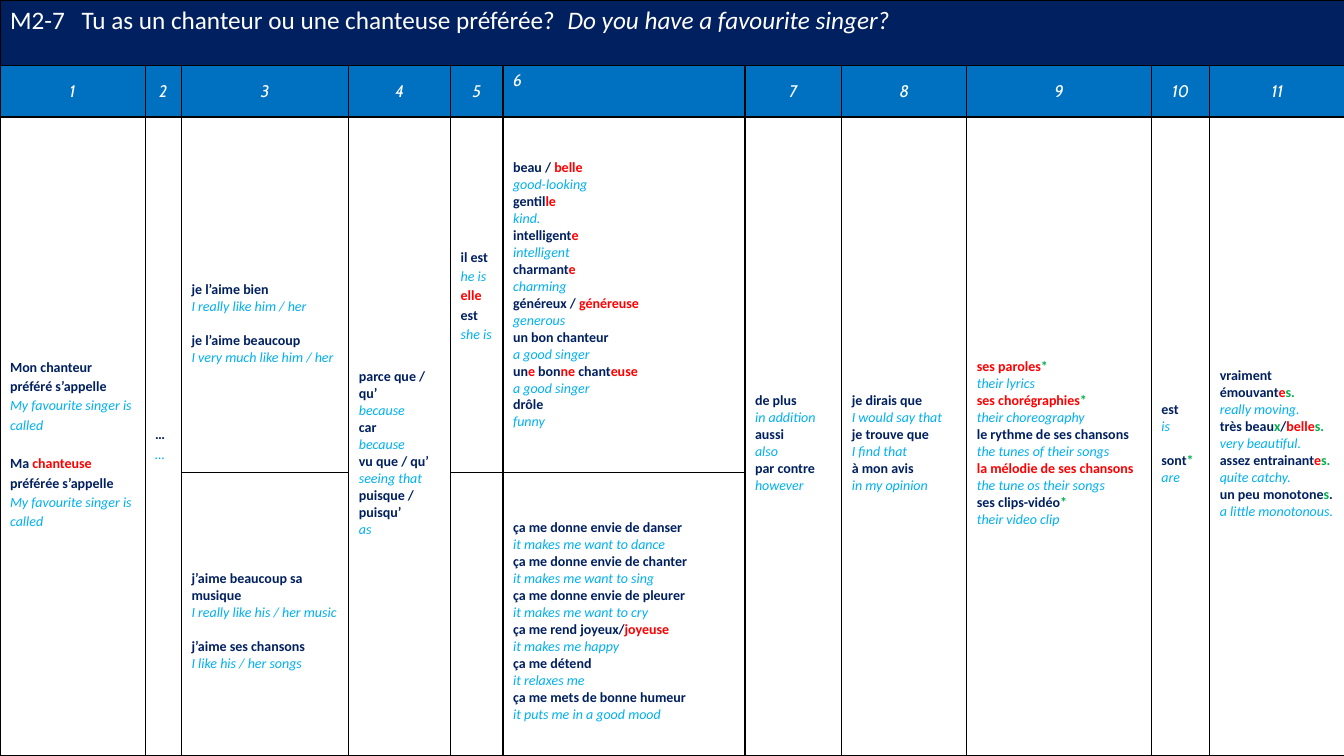
from dataclasses import dataclass

from lxml import etree
from pptx import Presentation
from pptx.dml.color import RGBColor
from pptx.enum.text import MSO_ANCHOR as Anchor, PP_ALIGN as Align
from pptx.oxml.ns import qn
from pptx.util import Inches, Pt

COLOURS = {
    "navy": "002060", "blue": "0070C0", "sky": "00B0F0", "white": "FFFFFF",
    "black": "000000", "r": "FF0000", "g": "00B050",
}
COLUMN_WIDTHS = [1.44, 0.36, 1.66, 1.01, 0.52, 2.4, 0.96, 1.24, 1.83, 0.58, 1.34]
ROW_HEIGHTS = [0.65, 0.51, 3.53, 2.81]
TITLE_TABS = [0.71, 5.53]


@dataclass
class Entry:
    """Groups of (French, English) pairs; r: marks feminine and g: plural endings."""
    row: int
    column: int
    groups: list
    rows: int = 1
    line_spacing: float = 1
    top_margin: float = 0.19


ENTRIES = [
    Entry(2, 0, [
        [("Mon chanteur préféré s’appelle", "My favourite singer is called")],
        [("Ma|r: chanteuse |préférée s’appelle", "My favourite singer is called")],
    ], rows=2, line_spacing=1.14),
    Entry(2, 1, [[("…", "…")]], rows=2, line_spacing=1.14),
    Entry(2, 2, [
        [("je l’aime bien", "I really like him / her")],
        [("je l’aime beaucoup", "I very much like him / her")],
    ], top_margin=0.63),
    Entry(2, 3, [[
        ("parce que / qu’", "because"),
        ("car", "because"),
        ("vu que / qu’", "seeing that"),
        ("puisque / puisqu’", "as"),
    ]], rows=2, top_margin=0.38),
    Entry(2, 4, [[("il est", "he is"), ("r:elle| est", "she is")]],
          line_spacing=1.14, top_margin=0.05),
    Entry(2, 5, [[
        ("beau / |r:belle", "good-looking"),
        ("gentil|r:le", "kind."),
        ("intelligent|r:e", "intelligent"),
        ("charmant|r:e", "charming"),
        ("généreux / |r:généreuse", "generous"),
        ("un bon chanteur", "a good singer"),
        ("un|r:e |bon|r:ne| chant|r:euse", "a good singer"),
        ("drôle", "funny"),
    ]], top_margin=0.05),
    Entry(2, 6, [[
        ("de plus", "in addition"),
        ("aussi", "also"),
        ("par contre", "however"),
    ]], rows=2),
    Entry(2, 7, [[
        ("je dirais que", "I would say that"),
        ("je trouve que", "I find that"),
        ("à mon avis", "in my opinion"),
    ]], rows=2),
    Entry(2, 8, [[
        ("r:ses paroles|g:*", "their lyrics"),
        ("r:ses chorégraphies|g:*", "their choreography"),
        ("le rythme de ses chansons", "the tunes of their songs"),
        ("r:la mélodie de ses chansons", "the tune os their songs"),
        ("ses clips-vidéo|g:*", "their video clip"),
    ]], rows=2),
    Entry(2, 9, [[("est", "is")], [("sont|g:*", "are")]], rows=2),
    Entry(2, 10, [[
        ("vraiment émouvant|r:e|g:s.", "really moving."),
        ("très beau|g:x|/|r:belle|g:s.", "very beautiful."),
        ("assez entrainant|r:e|g:s.", "quite catchy."),
        ("un peu monotone|g:s|.", "a little monotonous."),
    ]], rows=2),
    Entry(3, 2, [
        [("j’aime beaucoup sa musique", "I really like his / her music")],
        [("j’aime ses chansons", "I like his / her songs")],
    ]),
    Entry(3, 5, [[
        ("ça me donne envie de danser", "it makes me want to dance"),
        ("ça me donne envie de chanter", "it makes me want to sing"),
        ("ça me donne envie de pleurer", "it makes me want to cry"),
        ("ça me rend joyeux/|r:joyeuse", "it makes me happy"),
        ("ça me détend", "it relaxes me"),
        ("ça me mets de bonne humeur", "it puts me in a good mood"),
    ]]),
]


def rgb(name):
    return RGBColor.from_string(COLOURS[name])


def set_font(paragraph, size, colour, name="Calibri", bold=False, italic=False):
    font = paragraph.font
    font.name, font.size = name, Pt(size)
    font.bold, font.italic = bold, italic
    font.color.rgb = rgb(colour)


def add_borders(cell):
    properties = cell._tc.get_or_add_tcPr()
    for side in ("lnL", "lnR", "lnT", "lnB"):
        line = etree.SubElement(properties, qn(f"a:{side}"), w=str(Pt(1)))
        fill = etree.SubElement(line, qn("a:solidFill"))
        etree.SubElement(fill, qn("a:srgbClr"), val=COLOURS["black"])


def add_tabs(paragraph, positions):
    tabs = etree.SubElement(paragraph._p.get_or_add_pPr(), qn("a:tabLst"))
    for position in positions:
        etree.SubElement(tabs, qn("a:tab"), pos=str(Inches(position)), algn="l")


def add_table(slide):
    """Add the bordered grid, with its title and header rows coloured."""
    table = slide.shapes.add_table(
        len(ROW_HEIGHTS), len(COLUMN_WIDTHS), 0, 0,
        Inches(sum(COLUMN_WIDTHS)), Inches(sum(ROW_HEIGHTS))).table
    table.first_row = table.horz_banding = False
    for column, width in zip(table.columns, COLUMN_WIDTHS):
        column.width = Inches(width)
    for row, height, colour in zip(table.rows, ROW_HEIGHTS,
                                   ("navy", "blue", "white", "white")):
        row.height = Inches(height)
        for cell in row.cells:
            add_borders(cell)
            cell.fill.solid()
            cell.fill.fore_color.rgb = rgb(colour)
    return table


def write_title(table):
    title = table.cell(0, 0)
    title.merge(table.cell(0, len(COLUMN_WIDTHS) - 1))
    paragraph = title.text_frame.paragraphs[0]
    add_tabs(paragraph, TITLE_TABS)
    set_font(paragraph, 18, "white")
    paragraph.add_run().text = "M2-7\tTu as un chanteur ou une chanteuse préférée?\t"
    english = paragraph.add_run()
    english.text = "Do you have a favourite singer?"
    english.font.italic = True


def write_column_numbers(table):
    for number, cell in enumerate(table.rows[1].cells, start=1):
        paragraph = cell.text_frame.paragraphs[0]
        paragraph.text = str(number)
        set_font(paragraph, 12, "white", name="Cabin", italic=True)
        at_corner = number == 6
        cell.vertical_anchor = Anchor.TOP if at_corner else Anchor.MIDDLE
        paragraph.alignment = Align.LEFT if at_corner else Align.CENTER


def write_french(paragraph, text):
    set_font(paragraph, 10, "navy", bold=True)
    for part in text.split("|"):
        mark, _, words = part.rpartition(":")
        run = paragraph.add_run()
        run.text = words
        if mark:
            run.font.color.rgb = rgb(mark)


def write_english(paragraph, text):
    set_font(paragraph, 10, "sky", italic=True)
    paragraph.add_run().text = text


def write_entry(table, entry):
    cell = table.cell(entry.row, entry.column)
    if entry.rows > 1:
        cell.merge(table.cell(entry.row + entry.rows - 1, entry.column))
    cell.vertical_anchor = Anchor.MIDDLE
    cell.margin_top = Inches(entry.top_margin)
    frame = cell.text_frame
    paragraph = frame.paragraphs[0]
    for group_index, group in enumerate(entry.groups):
        for pair_index, pair in enumerate(group):
            for write, text in zip((write_french, write_english), pair):
                if paragraph is None:
                    paragraph = frame.add_paragraph()
                paragraph.line_spacing = entry.line_spacing
                if group_index and not pair_index and write is write_french:
                    paragraph.space_before = Pt(12.2 * entry.line_spacing)
                write(paragraph, text)
                paragraph = None


def main():
    presentation = Presentation()
    presentation.slide_width = Inches(13.33)
    presentation.slide_height = Inches(7.5)
    slide = presentation.slides.add_slide(presentation.slide_layouts[6])
    table = add_table(slide)
    write_title(table)
    write_column_numbers(table)
    for entry in ENTRIES:
        write_entry(table, entry)
    presentation.save("out.pptx")


if __name__ == "__main__":
    main()
